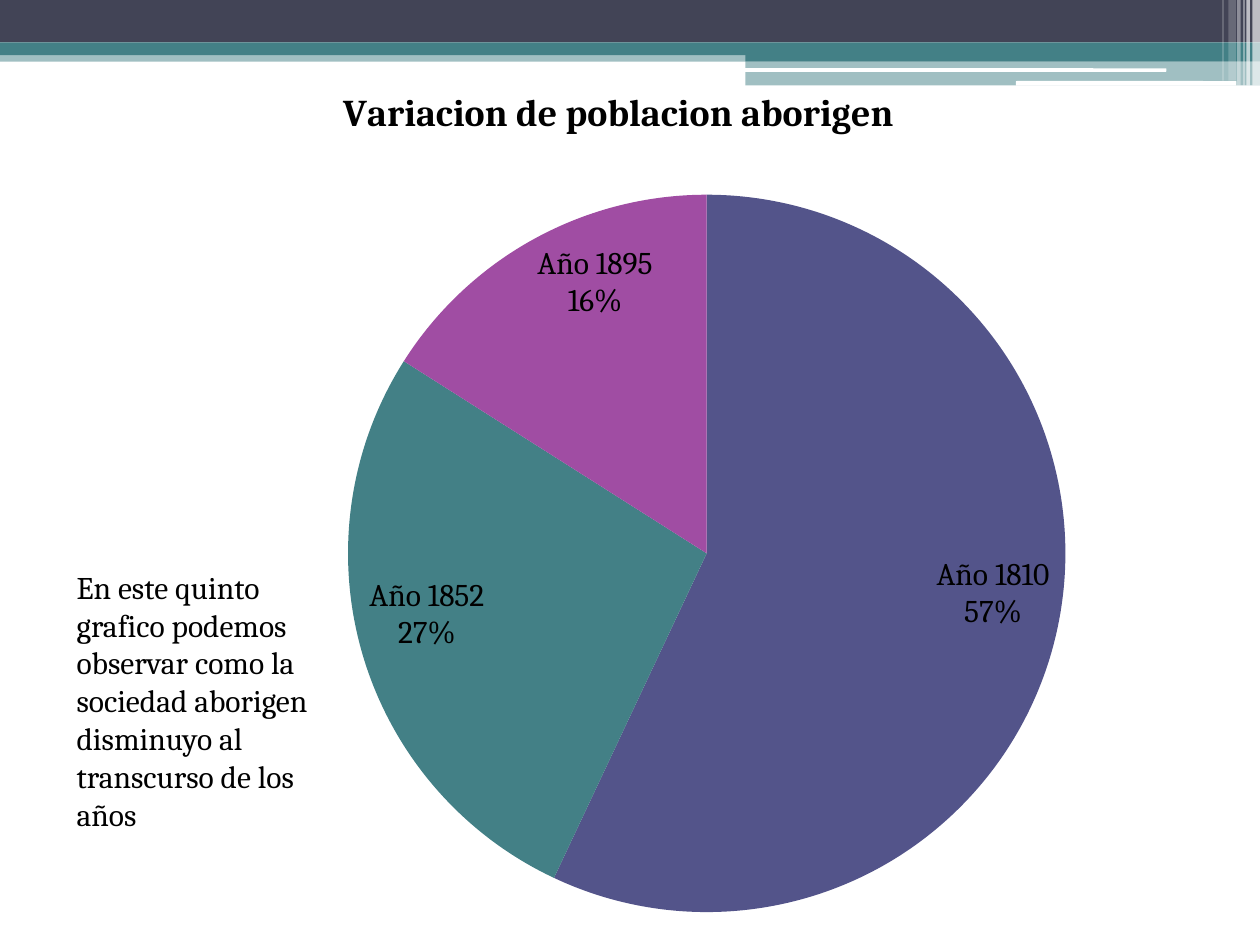
"""Builds a slide with a pie chart of the aboriginal population by year."""
from dataclasses import dataclass

from lxml import etree
from pptx import Presentation
from pptx import util as u
from pptx.chart import data
from pptx.dml.color import RGBColor
from pptx.enum import chart as ch
from pptx.enum import shapes, text
from pptx.oxml import parse_xml
from pptx.oxml.ns import nsdecls, qn


@dataclass(frozen=True)
class Theme:
    """Colours, font and type sizes of the slide."""
    ink: str = "000000"
    paper: str = "FFFFFF"
    slate: str = "424456"
    teal: str = "438086"
    slices: tuple = ("53548A", "438086", "A04DA3")
    font: str = "Cambria"
    body: float = 18
    heading: float = 21.6


THEME = Theme()
RECT = shapes.MSO_SHAPE.RECTANGLE
ROUNDED = shapes.MSO_SHAPE.ROUNDED_RECTANGLE
TITLE = "Variacion de poblacion aborigen "
COMMENT = ("En este quinto grafico podemos observar como la sociedad "
           "aborigen disminuyo al transcurso de los años")
POPULATION = {"Año 1810": 57, "Año 1852": 27, "Año 1895": 16}
PLOT_LAYOUT = {"x": 0.27, "y": 0.15, "w": 0.6, "h": 0.78}

HEADER_BANDS = [
    (0, 28.8, 720, 6.5, THEME.teal, 50),
    (0, 0, 720, 24.3, THEME.slate, 100),
    (0, 24.3, 720, 7.2, THEME.teal, 100),
    (426, 28, 294, 7, THEME.teal, 100),
    (426, 35, 294, 13.9, THEME.teal, 50),
]
WHITE_RULES = [(425.5, 39, 241, 2), (580.5, 46.3, 126, 2.7)]
EDGE_STRIPES = [
    (715.7, 4.3, 49, 65),
    (712.2, 2.1, 49, 65),
    (710.5, 0.7, 49, 60),
    (707, 2, 49, 40),
    (702, 4.3, 46.1, 20),
    (698.5, 0.7, 46.1, 30),
]


def style_font(font, size, bold=False):
    """Apply the theme typeface and ink."""
    font.name = THEME.font
    font.size = u.Pt(size)
    font.bold = bold
    font.color.rgb = RGBColor.from_string(THEME.ink)


def add_block(slide, left, top, width, height, color, opacity=100, kind=RECT):
    """Add a borderless block of one colour."""
    block = slide.shapes.add_shape(
        kind, u.Pt(left), u.Pt(top), u.Pt(width), u.Pt(height))
    block.shadow.inherit = False
    block.line.fill.background()
    block.fill.solid()
    block.fill.fore_color.rgb = RGBColor.from_string(color)
    if opacity < 100:
        tint = block.fill._xPr.find(".//" + qn("a:srgbClr"))
        etree.SubElement(tint, qn("a:alpha"), val=str(opacity * 1000))


def add_header(slide):
    """Draw the bands, rules and stripes across the top."""
    for band in HEADER_BANDS:
        add_block(slide, *band)
    for rule in WHITE_RULES:
        add_block(slide, *rule, THEME.paper, kind=ROUNDED)
    for left, width, height, opacity in EDGE_STRIPES:
        add_block(slide, left, 0, width, height, THEME.paper, opacity)


def set_plot_layout(chart):
    """Fix the inner plot area as fractions of the chart."""
    area = chart._chartSpace.chart.plotArea
    for old in area.findall(qn("c:layout")):
        area.remove(old)
    modes = "".join(f'<c:{axis}Mode val="edge"/>' for axis in "xy")
    sizes = "".join(f'<c:{key} val="{val}"/>' for key, val in PLOT_LAYOUT.items())
    area.insert(0, parse_xml(
        f'<c:layout {nsdecls("c")}><c:manualLayout><c:layoutTarget val="inner"/>'
        f'{modes}{sizes}</c:manualLayout></c:layout>'))


def label_slices(plot):
    """Show each year above its percentage, inside the slice."""
    plot.has_data_labels = True
    labels = plot.data_labels
    style_font(labels.font, THEME.body)
    labels.show_value = False
    labels.show_category_name = True
    labels.show_percentage = True
    labels.number_format = "0%"
    labels.number_format_is_linked = False
    labels.position = ch.XL_LABEL_POSITION.INSIDE_END
    separator = etree.Element(qn("c:separator"))
    separator.text = "\n"
    labels._element.find(qn("c:showBubbleSize")).addnext(separator)


def add_population_pie(slide):
    """Add the titled pie chart."""
    population = data.CategoryChartData()
    population.categories = list(POPULATION)
    population.add_series(TITLE, list(POPULATION.values()))
    chart = slide.shapes.add_chart(
        ch.XL_CHART_TYPE.PIE, u.Pt(14.4), u.Pt(31.7), u.Pt(683.3), u.Pt(527),
        population).chart
    style_font(chart.font, THEME.body)
    chart.has_legend = False
    chart.has_title = True
    heading = chart.chart_title.text_frame
    heading.text = TITLE
    style_font(heading.paragraphs[0].runs[0].font, THEME.heading, bold=True)
    set_plot_layout(chart)
    pie = chart.plots[0]
    pie.vary_by_categories = True
    for index, color in enumerate(THEME.slices):
        fill = pie.series[0].points[index].format.fill
        fill.solid()
        fill.fore_color.rgb = RGBColor.from_string(color)
    label_slices(pie)


def add_comment(slide):
    """Add the remark beside the pie."""
    remark = slide.shapes.add_textbox(
        u.Pt(36.7), u.Pt(321), u.Pt(158.4), u.Pt(160)).text_frame
    remark.word_wrap = True
    remark.auto_size = text.MSO_AUTO_SIZE.SHAPE_TO_FIT_TEXT
    remark.text = COMMENT
    style_font(remark.paragraphs[0].runs[0].font, THEME.body)


def main():
    """Build and save the slide."""
    deck = Presentation()
    deck.slide_width, deck.slide_height = u.Pt(720), u.Pt(540)
    slide = deck.slides.add_slide(deck.slide_layouts[6])
    add_header(slide)
    add_population_pie(slide)
    add_comment(slide)
    deck.save("out.pptx")


if __name__ == "__main__":
    main()
